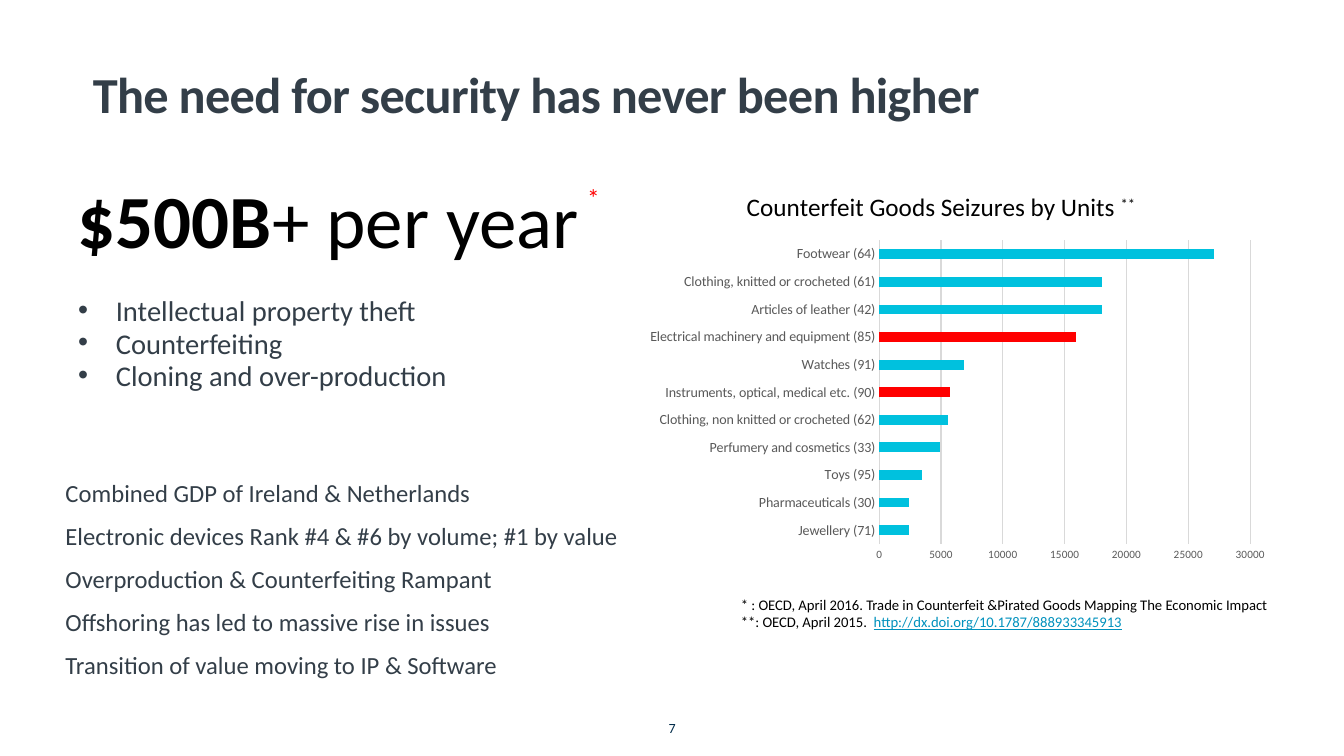
import pptx
import pptx.chart.data
import pptx.dml.color
import pptx.enum.chart
import pptx.enum.text
import pptx.oxml
import pptx.oxml.ns
import pptx.util
from lxml import etree

Cm, Pt = pptx.util.Cm, pptx.util.Pt
qn = pptx.oxml.ns.qn
ALIGN = pptx.enum.text.PP_ALIGN
ANCHOR = pptx.enum.text.MSO_ANCHOR

BLACK, SLATE, NAVY = "000000", "333E48", "002B49"
RED, CYAN, LINK = "FF0000", "00C1DE", "0091BD"
GRAY, GRID = "595959", "D9D9D9"


def rgb(value):
    return pptx.dml.color.RGBColor.from_string(value)


def set_layout(parent, x, y, w=None, h=None):
    """Place a chart part by fractions of the chart's size."""
    for old in parent.findall(qn("c:layout")):
        parent.remove(old)
    layout = etree.Element(qn("c:layout"))
    manual = etree.SubElement(layout, qn("c:manualLayout"))
    values = [("xMode", "edge"), ("yMode", "edge"), ("x", x), ("y", y)]
    if w is not None:
        values = [("layoutTarget", "inner")] + values + [("w", w), ("h", h)]
    for tag, value in values:
        etree.SubElement(manual, qn("c:" + tag)).set("val", str(value))
    parent.insert(0 if parent.find(qn("c:tx")) is None else 1, layout)


class SlideBuilder:
    font = "Calibri"

    def __init__(self, prs):
        self.s = prs.slides.add_slide(prs.slide_layouts[6])

    def style(self, font, size, color, bold=False):
        font.name, font.size, font.bold = self.font, Pt(size), bold
        font.color.rgb = rgb(color)

    def run(self, p, text, size, color, bold=False):
        r = p.add_run()
        r.text = text
        self.style(r.font, size, color, bold)
        return r

    def text(self, box, lines, size, color, bold=False, spacing=1.0, after=0,
             align=ALIGN.LEFT, anchor=ANCHOR.TOP, inset=0, wrap=True, bullet=False):
        sp = self.s.shapes.add_textbox(*[Cm(v) for v in box])
        tf = sp.text_frame
        tf.word_wrap, tf.vertical_anchor = wrap, anchor
        tf.margin_left = tf.margin_right = Cm(inset)
        tf.margin_top = tf.margin_bottom = Cm(inset / 2)
        tf.text = "\n".join(lines)
        for p in tf.paragraphs:
            p.alignment, p.line_spacing, p.space_after = align, spacing, Pt(after)
            if bullet:
                pPr = p._p.get_or_add_pPr()
                pPr.set("marL", str(Cm(1.27)))
                pPr.set("indent", str(Cm(-0.95)))
                etree.SubElement(pPr, qn("a:buFont")).set("typeface", "Arial")
                etree.SubElement(pPr, qn("a:buChar")).set("char", "•")
            for r in p.runs:
                self.style(r.font, size, color, bold)
        return tf

    def bar_chart(self, box, title, mark, rows, highlights):
        data = pptx.chart.data.CategoryChartData()
        data.categories = [name for name, _ in rows]
        data.add_series("Series 1", [value for _, value in rows])
        kind = pptx.enum.chart.XL_CHART_TYPE.BAR_CLUSTERED
        chart = self.s.shapes.add_chart(kind, *[Cm(v) for v in box], data).chart
        self.style(chart.font, 8, BLACK)
        chart.has_legend = False

        # Title with a raised footnote mark
        chart.has_title = True
        p = chart.chart_title.text_frame.paragraphs[0]
        self.run(p, title + " ", 18, BLACK)
        self.run(p, mark, 18, BLACK).font._element.set("baseline", "30000")
        set_layout(chart.chart_title._element, 0.25, 0.05)

        # Bars
        plot = chart.plots[0]
        plot.gap_width, plot.vary_by_categories = 182, False
        series = plot.series[0]
        series.format.fill.solid()
        series.format.fill.fore_color.rgb = rgb(CYAN)
        for i, (name, _) in enumerate(rows):
            if name in highlights:
                fill = series.points[i].format.fill
                fill.solid()
                fill.fore_color.rgb = rgb(RED)
        plot_area = chart._chartSpace.chart.plotArea
        set_layout(plot_area, 0.428, 0.165, 0.487, 0.658)

        # Axes
        cat, val = chart.category_axis, chart.value_axis
        for axis, size in ((cat, 10), (val, 8)):
            axis.major_tick_mark = pptx.enum.chart.XL_TICK_MARK.NONE
            axis.minor_tick_mark = pptx.enum.chart.XL_TICK_MARK.NONE
            self.style(axis.tick_labels.font, size, GRAY)
        val.minimum_scale, val.maximum_scale, val.major_unit = 0, 30000, 5000
        val.has_major_gridlines = True
        val.format.line.fill.background()
        for line in (cat.format.line, val.major_gridlines.format.line):
            line.color.rgb, line.width = rgb(GRID), Pt(0.75)


def main():
    prs = pptx.Presentation()
    prs.slide_width, prs.slide_height = Cm(33.87), Cm(19.05)
    b = SlideBuilder(prs)

    # Page number
    b.text((16.51, 18.19, 0.86, 0.38), ["7"], 10, NAVY, spacing=0.9, align=ALIGN.CENTER)

    # Title
    tf = b.text((2.34, 1.02, 29.21, 2.11), ["The need for security has never been higher"],
                36, SLATE, bold=True, spacing=0.85, anchor=ANCHOR.BOTTOM)
    tf.paragraphs[0].runs[0].font._element.set("spc", "-50")

    # Headline figure
    tf = b.text((1.96, 4.98, 14.07, 1.8), ["$500B"], 53.6, BLACK, bold=True, spacing=0.7)
    b.run(tf.paragraphs[0], "+ per year", 53.6, BLACK)

    # Threats and findings
    b.text((1.65, 7.63, 14.38, 2.5),
           ["Intellectual property theft", "Counterfeiting", "Cloning and over-production"],
           20.4, SLATE, spacing=0.7, after=6, bullet=True)
    b.text((1.65, 12.24, 14.38, 5.3),
           ["Combined GDP of Ireland & Netherlands",
            "Electronic devices Rank #4 & #6 by volume; #1 by value",
            "Overproduction & Counterfeiting Rampant",
            "Offshoring has led to massive rise in issues",
            "Transition of value moving to IP & Software"],
           17.6, SLATE, spacing=0.7, after=16)

    # Seizures chart
    machinery = "Electrical machinery and equipment (85)"
    instruments = "Instruments, optical, medical etc. (90)"
    seizures = [
        ("Jewellery (71)", 2400),
        ("Pharmaceuticals (30)", 2400),
        ("Toys (95)", 3500),
        ("Perfumery and cosmetics (33)", 4900),
        ("Clothing, non knitted or crocheted (62)", 5600),
        (instruments, 5700),
        ("Watches (91)", 6900),
        (machinery, 15900),
        ("Articles of leather (42)", 18000),
        ("Clothing, knitted or crocheted (61)", 18000),
        ("Footwear (64)", 27100),
    ]
    b.bar_chart((13.94, 4.14, 19.2, 11.63), "Counterfeit Goods Seizures by Units", "**",
                seizures, (machinery, instruments))

    # Sources
    tf = b.text((18.42, 14.88, 15, 1.14),
                ["* : OECD, April 2016. Trade in Counterfeit &Pirated Goods Mapping "
                 "The Economic Impact", "**: OECD, April 2015.  "],
                10.5, BLACK, inset=0.25)
    r = b.run(tf.paragraphs[1], "http://dx.doi.org/10.1787/888933345913", 10.5, LINK)
    r.font.underline = True

    # Footnote mark beside the headline
    b.text((14.55, 4.47, 0.84, 1.02), ["*"], 18, RED, inset=0.25, wrap=False)

    prs.save("out.pptx")


if __name__ == "__main__":
    main()
